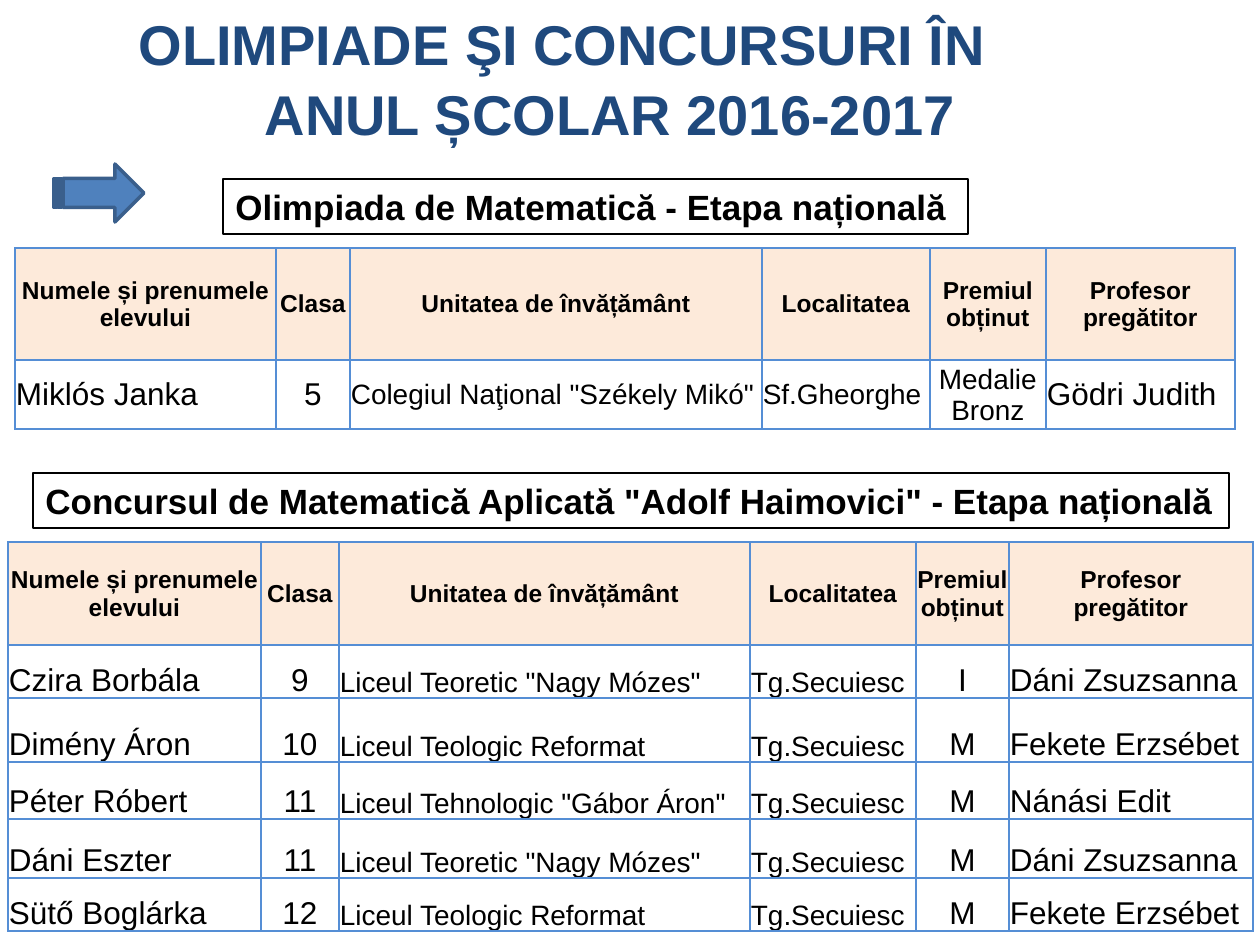
from lxml import etree
from pptx import Presentation
from pptx.dml.color import RGBColor
from pptx.enum.shapes import MSO_SHAPE
from pptx.enum.text import MSO_ANCHOR, MSO_AUTO_SIZE, PP_ALIGN
from pptx.oxml.ns import qn
from pptx.util import Emu, Pt

ARROW = MSO_SHAPE.STRIPED_RIGHT_ARROW
MIDDLE, BOTTOM = MSO_ANCHOR.MIDDLE, MSO_ANCHOR.BOTTOM
LEFT, CENTER = PP_ALIGN.LEFT, PP_ALIGN.CENTER
NO_AUTOFIT = MSO_AUTO_SIZE.NONE

EMU_PER_PX = 914400 / 126
FONT = "Arial"
COLORS = {
    "title": "1F497D",
    "text": "000000",
    "header": "FDEADA",
    "grid": "558ED5",
    "arrow": "4F81BD",
    "arrow_edge": "3A5F8C",
}
CENTERED_COLUMNS = (1, 4)  # class and prize


def px(length):
    return Emu(round(length * EMU_PER_PX))


def rgb(name):
    return RGBColor.from_string(COLORS[name])


class AwardsSlide:
    def __init__(self, prs):
        self.slide = prs.slides.add_slide(prs.slide_layouts[5])

    def style(self, frame, size, bold=False, color="text", align=LEFT):
        for paragraph in frame.paragraphs:
            paragraph.alignment = align
            for run in paragraph.runs:
                run.font.name = FONT
                run.font.size = Pt(size)
                run.font.bold = bold
                run.font.color.rgb = rgb(color)

    def title(self, text, box, first_indent, next_indent):
        heading = self.slide.shapes.title
        heading.left, heading.top, heading.width, heading.height = map(px, box)
        frame = heading.text_frame
        frame.text = text
        frame.word_wrap = True
        frame.auto_size = NO_AUTOFIT
        frame.vertical_anchor = MIDDLE
        self.style(frame, 32, True, "title")
        paragraph = frame.paragraphs[0]
        paragraph.line_spacing = 1.05
        # Hanging indent: the second line starts further in
        properties = paragraph._p.get_or_add_pPr()
        properties.set("marL", str(px(next_indent)))
        properties.set("indent", str(px(first_indent - next_indent)))

    def caption(self, text, box):
        label = self.slide.shapes.add_textbox(*map(px, box))
        label.line.color.rgb = rgb("text")
        label.line.width = Pt(0.75)
        frame = label.text_frame
        frame.text = text
        frame.word_wrap = True
        frame.vertical_anchor = MIDDLE
        self.style(frame, 20, True)

    def arrow(self, box):
        marker = self.slide.shapes.add_shape(ARROW, *map(px, box))
        marker.shadow.inherit = False
        marker.fill.solid()
        marker.fill.fore_color.rgb = rgb("arrow")
        marker.line.color.rgb = rgb("arrow_edge")
        marker.line.width = Pt(2)

    def borders(self, cell):
        properties = cell._tc.get_or_add_tcPr()
        for position, side in enumerate(("lnL", "lnR", "lnT", "lnB")):
            line = etree.Element(qn(f"a:{side}"), w=str(Pt(1)))
            fill = etree.SubElement(line, qn("a:solidFill"))
            etree.SubElement(fill, qn("a:srgbClr"), val=COLORS["grid"])
            properties.insert(position, line)

    def table(self, rows, corner, widths, heights, sizes, anchor):
        grid = self.slide.shapes.add_table(
            len(rows), len(widths), *map(px, corner), px(sum(widths)), px(sum(heights))
        ).table
        grid.first_row = grid.horz_banding = False
        for column, width in zip(grid.columns, widths):
            column.width = px(width)
        for r, (values, height) in enumerate(zip(rows, heights)):
            grid.rows[r].height = px(height)
            for c, value in enumerate(values):
                cell = grid.cell(r, c)
                cell.margin_left = cell.margin_right = cell.margin_top = px(1)
                cell.margin_bottom = 0
                cell.text_frame.text = value
                if r == 0:
                    cell.vertical_anchor = MIDDLE
                    cell.fill.solid()
                    cell.fill.fore_color.rgb = rgb("header")
                    self.style(cell.text_frame, 14, True, align=CENTER)
                else:
                    cell.vertical_anchor = anchor
                    cell.fill.background()
                    align = CENTER if c in CENTERED_COLUMNS else LEFT
                    self.style(cell.text_frame, sizes[c], align=align)
                self.borders(cell)


def header(prize):
    return ("Numele și prenumele elevului", "Clasa", "Unitatea de învățământ",
            "Localitatea", prize, "Profesor\npregătitor")


OLYMPIAD = [
    header("Premiul\nobținut"),
    ("Miklós Janka", "5", 'Colegiul Naţional "Székely Mikó"', "Sf.Gheorghe",
     "Medalie\nBronz", "Gödri Judith"),
]

TOWN = "Tg.Secuiesc"
CONTEST = [
    header("Premiul obținut"),
    ("Czira Borbála", "9", 'Liceul Teoretic "Nagy Mózes"', TOWN, "I", "Dáni Zsuzsanna"),
    ("Dimény Áron", "10", "Liceul Teologic Reformat", TOWN, "M", "Fekete Erzsébet"),
    ("Péter Róbert", "11", 'Liceul Tehnologic "Gábor Áron"', TOWN, "M", "Nánási Edit"),
    ("Dáni Eszter", "11", 'Liceul Teoretic "Nagy Mózes"', TOWN, "M", "Dáni Zsuzsanna"),
    ("Sütő Boglárka", "12", "Liceul Teologic Reformat", TOWN, "M", "Fekete Erzsébet"),
]


def main():
    prs = Presentation()
    prs.slide_width, prs.slide_height = px(1260), px(945)
    page = AwardsSlide(prs)

    page.title("OLIMPIADE ŞI CONCURSURI ÎN\vANUL ȘCOLAR 2016-2017",
               (0, 3, 1260, 147), first_indent=126, next_indent=252)

    # Applied mathematics contest
    page.caption('Concursul de Matematică Aplicată "Adolf Haimovici" - Etapa națională',
                 (33, 473, 1196, 55))
    page.table(CONTEST, (8, 542), (253, 78, 411, 166, 93, 244),
               (103, 53, 64, 57, 59, 53), (18, 18, 16, 16, 18, 18), BOTTOM)

    # Mathematics olympiad
    page.caption("Olimpiada de Matematică - Etapa națională", (223, 179, 745, 55))
    page.table(OLYMPIAD, (15, 248), (261, 74, 412, 168, 116, 189),
               (112, 69), (18, 18, 16, 16, 16, 18), MIDDLE)
    page.arrow((54, 164, 90, 58))

    prs.save("out.pptx")


if __name__ == "__main__":
    main()
